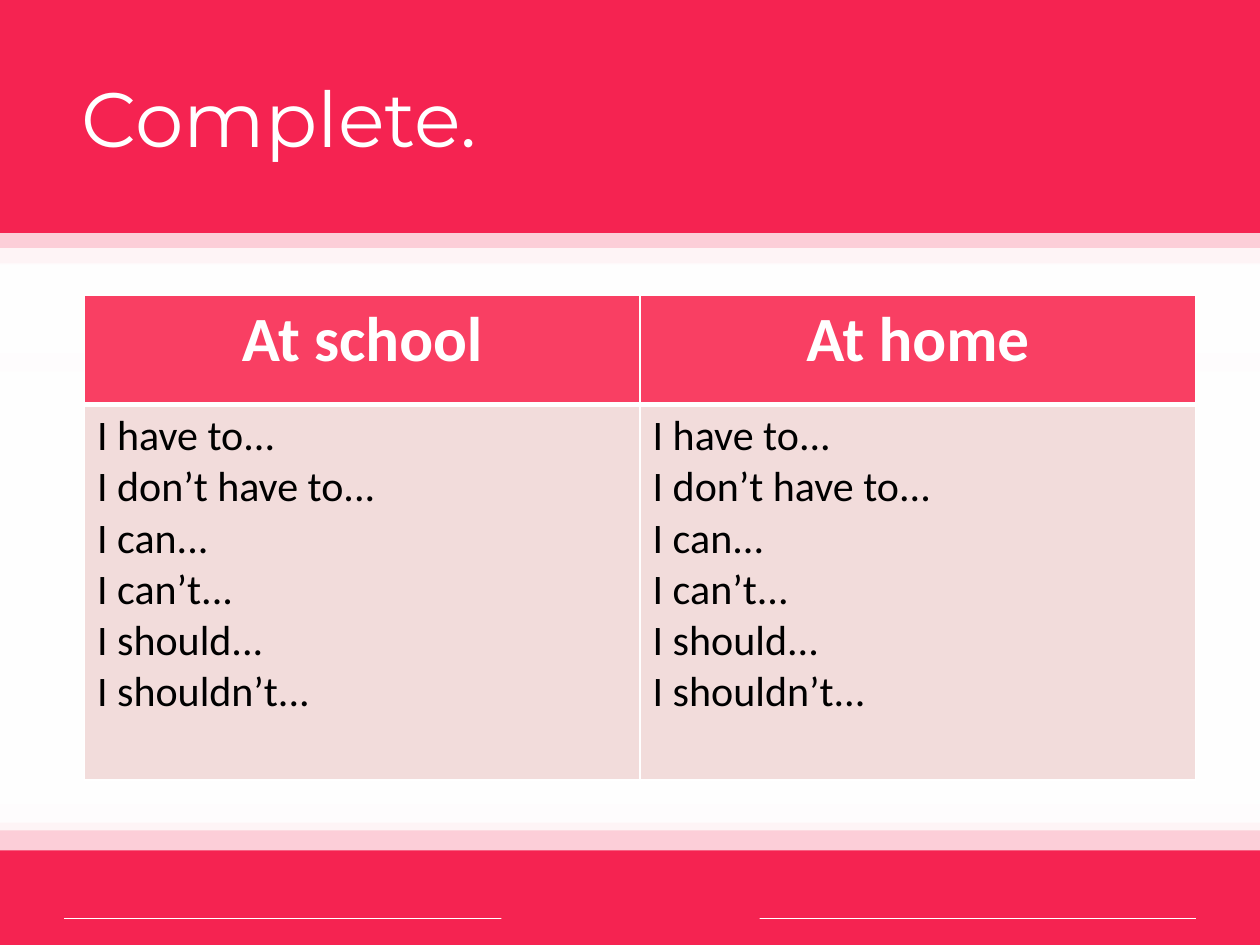
from dataclasses import dataclass

from lxml import etree
from pptx import Presentation
from pptx.dml.color import RGBColor
from pptx.enum.shapes import MSO_CONNECTOR, MSO_SHAPE
from pptx.enum.text import MSO_ANCHOR, PP_ALIGN
from pptx.oxml.ns import qn
from pptx.util import Inches, Pt

RECTANGLE = MSO_SHAPE.RECTANGLE
STRAIGHT = MSO_CONNECTOR.STRAIGHT
TOP = MSO_ANCHOR.TOP
LEFT, CENTER = PP_ALIGN.LEFT, PP_ALIGN.CENTER


@dataclass(frozen=True)
class Theme:
    red: str = "F52351"
    white: str = "FFFFFF"
    black: str = "000000"
    header_fill: str = "F93F63"
    body_fill: str = "F2DCDB"
    title_font: str = "Montserrat"
    table_font: str = "Calibri"
    title_size: int = 44
    header_size: int = 36
    body_size: int = 24
    band_opacity: int = 78


@dataclass(frozen=True)
class Band:
    """A full-width strip."""
    top: float
    height: float


@dataclass(frozen=True)
class CellStyle:
    fill: str
    color: str
    size: int
    bold: bool
    alignment: PP_ALIGN
    top_border: float
    bottom_border: float


THEME = Theme()
SLIDE_WIDTH, SLIDE_HEIGHT = 10, 7.5
FOOTER = Band(6.98, 0.52)
WHITE_BANDS = [
    Band(2.09, 0.71), Band(1.97, 0.71), Band(1.85, 0.51),
    Band(2.95, 3.58), Band(2.1, 4.09), Band(2.53, 3.38),
    Band(5.83, 0.92), Band(5.67, 0.92), Band(2.2, 4.18),
]
HEADER_STYLE = CellStyle(THEME.header_fill, THEME.white, THEME.header_size,
                         True, CENTER, 1, 3)
BODY_STYLE = CellStyle(THEME.body_fill, THEME.black, THEME.body_size,
                       False, LEFT, 3, 1)
HEADINGS = ["At school", "At home"]
PROMPTS = ["I have to...", "I don’t have to...", "I can...",
           "I can’t...", "I should...", "I shouldn’t..."]


def rgb(color: str) -> RGBColor:
    return RGBColor.from_string(color)


def add_rectangle(slide, left: float, top: float, width: float, height: float,
                  color: str, opacity: int = 100) -> None:
    shape = slide.shapes.add_shape(RECTANGLE, Inches(left), Inches(top),
                                   Inches(width), Inches(height))
    shape.shadow.inherit = False
    shape.fill.solid()
    shape.fill.fore_color.rgb = rgb(color)
    shape.line.fill.background()
    if opacity < 100:
        fill_color = shape.fill._xPr.find(qn("a:solidFill"))[0]
        etree.SubElement(fill_color, qn("a:alpha"), val=str(opacity * 1000))


def add_footer_rule(slide) -> None:
    """Draw a thin rule with its middle hidden behind a red block."""
    rule = slide.shapes.add_connector(STRAIGHT, Inches(0.51), Inches(7.29),
                                      Inches(9.49), Inches(7.29))
    rule.line.color.rgb = rgb(THEME.white)
    rule.line.width = Pt(0.25)
    etree.SubElement(rule._element.spPr, qn("a:effectLst"))
    add_rectangle(slide, 3.98, FOOTER.top, 2.05, FOOTER.height, THEME.red)


def add_background(slide) -> None:
    add_rectangle(slide, 0, 0, SLIDE_WIDTH, SLIDE_HEIGHT, THEME.red)
    add_rectangle(slide, 0, FOOTER.top, SLIDE_WIDTH, FOOTER.height, THEME.red)
    add_footer_rule(slide)
    for band in WHITE_BANDS:
        add_rectangle(slide, 0, band.top, SLIDE_WIDTH, band.height,
                      THEME.white, THEME.band_opacity)


def format_run(run, font_name: str, size: int, color: str, bold: bool) -> None:
    run.font.name = font_name
    run.font.size = Pt(size)
    run.font.color.rgb = rgb(color)
    run.font.bold = bold


def add_title(slide, text: str) -> None:
    box = slide.shapes.add_textbox(Inches(0.55), Inches(0.51),
                                   Inches(8.9), Inches(1.42))
    text_frame = box.text_frame
    text_frame.word_wrap = True
    text_frame.vertical_anchor = TOP
    text_frame.text = text
    format_run(text_frame.paragraphs[0].runs[0], THEME.title_font,
               THEME.title_size, THEME.white, False)


def set_border(cell, side: str, width: float) -> None:
    border = etree.SubElement(cell._tc.get_or_add_tcPr(), qn(f"a:ln{side}"),
                              w=str(Pt(width)))
    fill = etree.SubElement(border, qn("a:solidFill"))
    etree.SubElement(fill, qn("a:srgbClr"), val=THEME.white)


def fill_cell(cell, lines: list[str], style: CellStyle) -> None:
    for side, width in (("L", 1), ("R", 1), ("T", style.top_border),
                        ("B", style.bottom_border)):
        set_border(cell, side, width)
    cell.fill.solid()
    cell.fill.fore_color.rgb = rgb(style.fill)
    cell.vertical_anchor = TOP
    cell.text_frame.text = "\n".join(lines)
    for paragraph in cell.text_frame.paragraphs:
        paragraph.alignment = style.alignment
        for run in paragraph.runs:
            format_run(run, THEME.table_font, style.size, style.color, style.bold)


def add_prompt_table(slide) -> None:
    table = slide.shapes.add_table(2, len(HEADINGS), Inches(0.67), Inches(2.34),
                                   Inches(8.82), Inches(3.85)).table
    table.horz_banding = False
    table.rows[0].height = Inches(0.87)
    table.rows[1].height = Inches(2.98)
    for column, heading in enumerate(HEADINGS):
        fill_cell(table.cell(0, column), [heading], HEADER_STYLE)
        fill_cell(table.cell(1, column), PROMPTS, BODY_STYLE)


def main() -> None:
    presentation = Presentation()
    presentation.slide_width = Inches(SLIDE_WIDTH)
    presentation.slide_height = Inches(SLIDE_HEIGHT)
    slide = presentation.slides.add_slide(presentation.slide_layouts[6])
    add_background(slide)
    add_title(slide, "Complete.")
    add_prompt_table(slide)
    presentation.save("out.pptx")


if __name__ == "__main__":
    main()
